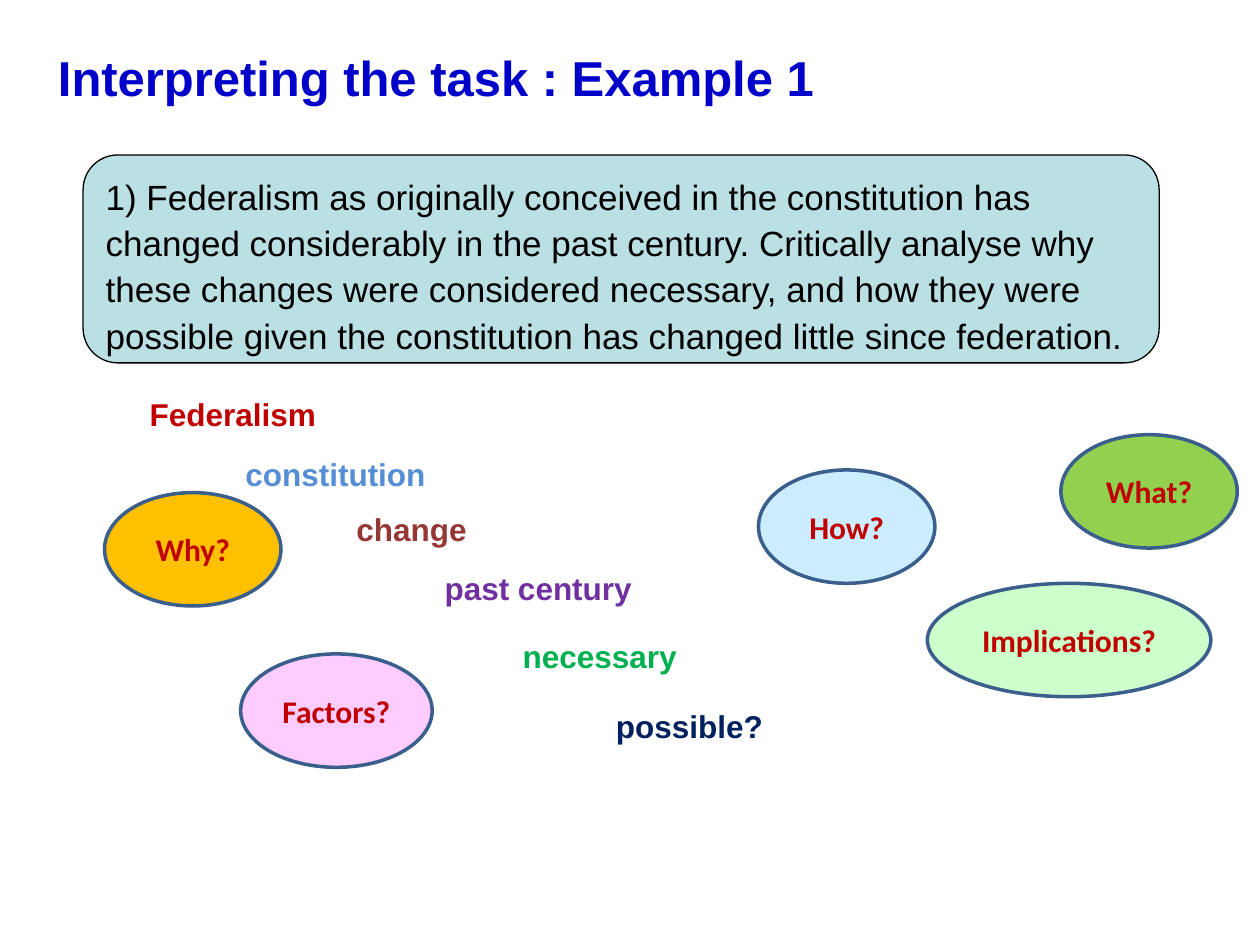
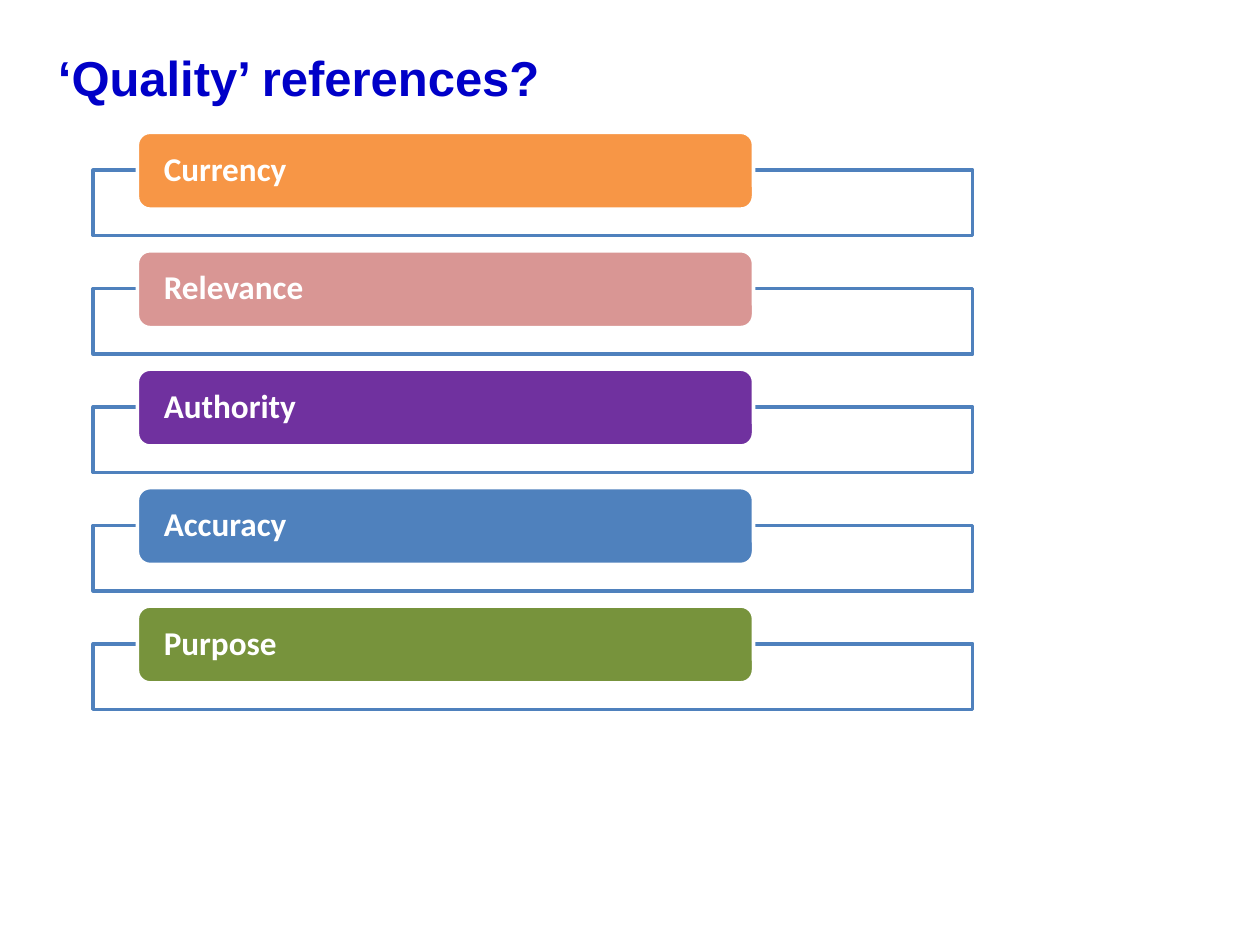
from lxml import etree
from pptx import Presentation
from pptx.dml.color import RGBColor
from pptx.enum.shapes import MSO_SHAPE
from pptx.enum.text import MSO_ANCHOR, MSO_AUTO_SIZE, PP_ALIGN
from pptx.oxml.ns import qn
from pptx.util import Inches, Pt

COLORS = {
    "title": "0000C8", "black": "000000", "white": "FFFFFF",
    "task": "BBE0E3", "red": "C00000", "sky": "558ED5", "brown": "953735",
    "violet": "7030A0", "green": "00B050", "navy": "002060",
    "ellipse line": "3A5F8C", "lime": "92D050", "amber": "FFC000",
    "ice": "CCECFF", "pink": "FFCCFF", "mint": "CCFFCC",
    "blue": "4F81BD", "orange": "F79646", "rose": "D99694",
    "purple": "70319F", "olive": "77933C",
}


def style_text(paragraph, text, font_name, size, color, bold=True):
    paragraph.text = text
    font = paragraph.font
    font.name, font.size, font.bold = font_name, Pt(size), bold
    font.color.rgb = RGBColor.from_string(COLORS[color])


def add_outlined(slide, kind, left, top, width, height, fill, line, weight=2):
    shape = slide.shapes.add_shape(
        kind, Inches(left), Inches(top), Inches(width), Inches(height))
    shape.shadow.inherit = False
    shape.fill.solid()
    shape.fill.fore_color.rgb = RGBColor.from_string(COLORS[fill])
    shape.line.color.rgb = RGBColor.from_string(COLORS[line])
    shape.line.width = Pt(weight)
    return shape


prs = Presentation()
prs.slide_width, prs.slide_height = Inches(10), Inches(7.5)

# Titled slides
slides = []
for heading in ("Interpreting the task : Example 1", "‘Quality’ references?"):
    slide = prs.slides.add_slide(prs.slide_layouts[5])
    title = slide.shapes.title
    title.left, title.top = Inches(0.36), Inches(0.29)
    title.width, title.height = Inches(9.41), Inches(0.73)
    title.text_frame.auto_size = MSO_AUTO_SIZE.NONE
    title.text_frame.vertical_anchor = MSO_ANCHOR.TOP
    title.text_frame.margin_top = Inches(0.09)
    heading_line = title.text_frame.paragraphs[0]
    heading_line.alignment = PP_ALIGN.LEFT
    style_text(heading_line, heading, "Arial", 28, "title")
    slides.append(slide)
example_slide, quality_slide = slides

# Example 1: the task, its key words and the questions they raise
task = add_outlined(example_slide, MSO_SHAPE.ROUNDED_RECTANGLE,
                    0.66, 1.23, 8.54, 1.65, "task", "black", 0.75)
task.text_frame.word_wrap = True
task.text_frame.vertical_anchor = MSO_ANCHOR.TOP
task_text = task.text_frame.paragraphs[0]
task_text.alignment = PP_ALIGN.LEFT
task_text.line_spacing = 1.1
style_text(
    task_text,
    "1) Federalism as originally conceived in the constitution has changed "
    "considerably in the past century. Critically analyse why these changes "
    "were considered necessary, and how they were possible given the "
    "constitution has changed little since federation.",
    "Arial", 20, "black", bold=False)

key_words = [
    ("Federalism", 1.09, 3.06, 3.36, "red"),
    ("constitution", 1.85, 3.53, 3.14, "sky"),
    ("change", 2.73, 3.97, 2.68, "brown"),
    ("past century", 3.43, 4.44, 2.68, "violet"),
    ("necessary", 4.05, 4.98, 2.68, "green"),
    ("possible?", 4.79, 5.53, 2.68, "navy"),
]
for word, left, top, width, color in key_words:
    key_word = example_slide.shapes.add_textbox(
        Inches(left), Inches(top), Inches(width), Inches(0.43))
    key_word.text_frame.word_wrap = True
    word_line = key_word.text_frame.paragraphs[0]
    word_line.alignment = PP_ALIGN.JUSTIFY
    word_line.line_spacing = 1.1
    style_text(word_line, word, "Arial", 18, color)

questions = [
    ("What?", 8.42, 3.45, 1.4, "lime"),
    ("Why?", 0.83, 3.91, 1.4, "amber"),
    ("How?", 6.02, 3.73, 1.4, "ice"),
    ("Factors?", 1.91, 5.19, 1.52, "pink"),
    ("Implications?", 7.36, 4.63, 2.25, "mint"),
]
for word, left, top, width, fill in questions:
    question = add_outlined(example_slide, MSO_SHAPE.OVAL,
                            left, top, width, 0.9, fill, "ellipse line")
    question.text_frame.margin_left = question.text_frame.margin_right = 0
    question_line = question.text_frame.paragraphs[0]
    question_line.alignment = PP_ALIGN.CENTER
    style_text(question_line, word, "Calibri", 18, "red")

# Quality references: one framed bar per criterion
criteria = [("Currency", "orange"), ("Relevance", "rose"),
            ("Authority", "purple"), ("Accuracy", "blue"), ("Purpose", "olive")]
FIRST_BAR_TOP, ROW_PITCH, FRAME_DROP = 1.05, 0.94, 0.3
for row, (criterion, fill) in enumerate(criteria):
    bar_top = FIRST_BAR_TOP + row * ROW_PITCH
    frame = add_outlined(quality_slide, MSO_SHAPE.RECTANGLE,
                         0.74, bar_top + FRAME_DROP, 6.98, 0.52, "white", "blue")
    frame_fill = frame.fill._xPr.find(qn("a:solidFill"))
    etree.SubElement(frame_fill[0], qn("a:alpha"), val="90000")

    bar = add_outlined(quality_slide, MSO_SHAPE.ROUNDED_RECTANGLE,
                       1.09, bar_top, 4.89, 0.61, fill, "white")
    label = bar.text_frame
    label.vertical_anchor = MSO_ANCHOR.MIDDLE
    label.margin_left = label.margin_right = Inches(0.18)
    label.margin_top = label.margin_bottom = 0
    label.paragraphs[0].alignment = PP_ALIGN.LEFT
    label.paragraphs[0].line_spacing = 0.9
    style_text(label.paragraphs[0], criterion, "Calibri", 19, "white")

prs.save("out.pptx")
